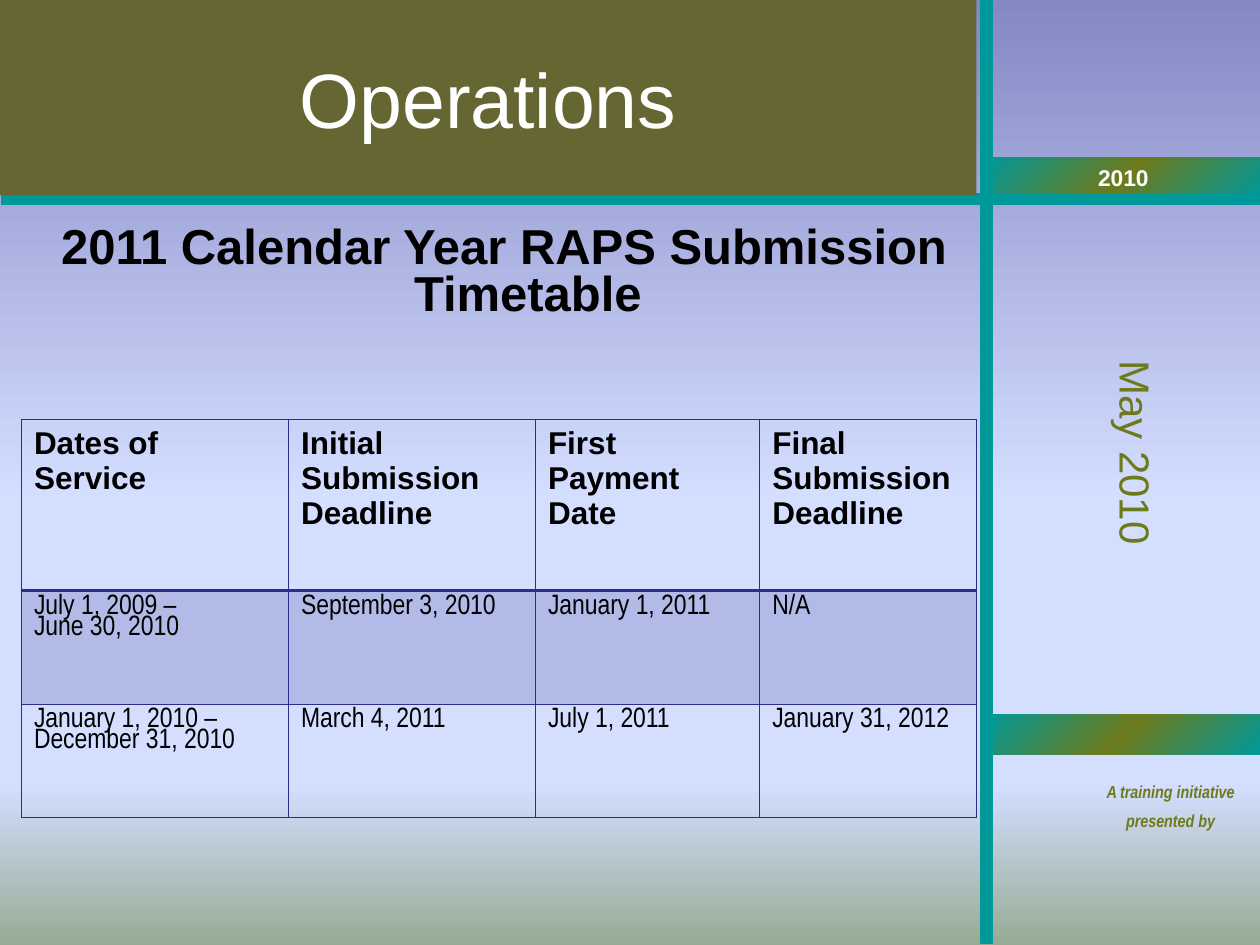
import pptx
import pptx.util
from pptx.dml.color import RGBColor
from pptx.enum.shapes import MSO_CONNECTOR, MSO_SHAPE
from pptx.enum.text import MSO_ANCHOR, PP_ALIGN
from pptx.oxml.ns import qn
from lxml import etree

Inches, Pt = pptx.util.Inches, pptx.util.Pt

TEAL = RGBColor(0x00, 0x99, 0x99)
OLIVE = RGBColor(0x6D, 0x7A, 0x1C)
BROWN = RGBColor(0x66, 0x66, 0x33)
WHITE = RGBColor(0xFF, 0xFF, 0xFF)
BLACK = RGBColor(0x00, 0x00, 0x00)
NAVY = RGBColor(0x2D, 0x2D, 0x8A)
SKY = [(0, RGBColor(0x84, 0x88, 0xC4)), (53, RGBColor(0xD4, 0xDE, 0xFF)),
       (83, RGBColor(0xD4, 0xDE, 0xFF)), (100, RGBColor(0x96, 0xAB, 0x94))]
BAND = [(0, TEAL), (50, OLIVE), (100, TEAL)]

# Content
TITLE = "Operations"
SUBTITLE = "2011 Calendar Year RAPS Submission Timetable"
YEAR = "2010"
MONTH = "May 2010"
CREDIT = "A training initiative presented by"
TIMETABLE = [
    ["Dates of Service", "Initial Submission Deadline",
     "First Payment Date", "Final Submission Deadline"],
    ["July 1, 2009 –\nJune 30, 2010", "September 3, 2010", "January 1, 2011", "N/A"],
    ["January 1, 2010 – December 31, 2010", "March 4, 2011",
     "July 1, 2011", "January 31, 2012"],
]
COLUMNS = [2.12, 1.96, 1.78, 1.72]
ROWS = [1.36, 0.9, 0.9]
RULES = [(7.83, 0, 7.83, 7.25, 6), (10, 1.58, 0.01, 1.58, 7.25),
         (7.83, 0, 7.83, 7.49, 7.25)]

# Text formats
TITLE_FONT = dict(name="Arial", size=Pt(44), bold=False)
SUBTITLE_FONT = dict(name="Arial", size=Pt(28), bold=True)
YEAR_FONT = dict(name="Arial", size=Pt(13), bold=True)
MONTH_FONT = dict(name="Arial", size=Pt(24), bold=False)
CREDIT_FONT = dict(name="Arial Narrow", size=Pt(10), bold=True, italic=True)
HEAD_FONT = dict(name="Arial", size=Pt(18), bold=True)
DATE_FONT = dict(name="Arial Narrow", size=Pt(16), bold=False)


def inches(*values):
    return [Inches(value) for value in values]


def write(frame, text, font, color, align=PP_ALIGN.CENTER, spacing=None):
    frame.word_wrap = True
    frame.text = text
    for para in frame.paragraphs:
        para.alignment = align
        para.line_spacing = spacing
        for key, value in font.items():
            setattr(para.font, key, value)
        para.font.color.rgb = color


def add_color(parent, color, alpha=None):
    node = etree.SubElement(parent, qn("a:srgbClr"), val=str(color))
    if alpha is not None:
        etree.SubElement(node, qn("a:alpha"), val=str(alpha * 1000))


def set_gradient(fill, root, stops, angle):
    fill.gradient()
    gradient = root.find(".//" + qn("a:gradFill"))
    for child in list(gradient):
        gradient.remove(child)
    stop_list = etree.SubElement(gradient, qn("a:gsLst"))
    for position, color in stops:
        stop = etree.SubElement(stop_list, qn("a:gs"), pos=str(position * 1000))
        add_color(stop, color)
    etree.SubElement(gradient, qn("a:lin"), ang=str(angle * 60000), scaled="0")


def set_borders(cell, widths):
    properties = cell._tc.get_or_add_tcPr()
    for index, (side, width) in enumerate(zip("LRTB", widths)):
        border = etree.Element(qn("a:ln" + side), w=str(Pt(width)))
        add_color(etree.SubElement(border, qn("a:solidFill")), NAVY)
        properties.insert(index, border)


deck = pptx.Presentation()
deck.slide_width, deck.slide_height = inches(10, 7.5)
page = deck.slides.add_slide(deck.slide_layouts[5])
set_gradient(page.background.fill, page.element, SKY, 90)
shapes = page.shapes

# Sidebar bands
for top, label in [(1.25, YEAR), (5.67, "")]:
    band = shapes.add_shape(MSO_SHAPE.RECTANGLE, *inches(7.83, top, 2.17, 0.32))
    band.shadow.inherit = False
    band.line.fill.background()
    set_gradient(band.fill, band._element, BAND, 45)
    if label:
        write(band.text_frame, label, YEAR_FONT, WHITE)

# Teal rules
for x1, y1, x2, y2, width in RULES:
    rule = shapes.add_connector(MSO_CONNECTOR.STRAIGHT, *inches(x1, y1, x2, y2))
    rule.line.color.rgb = TEAL
    rule.line.width = Pt(width)
    etree.SubElement(rule._element.spPr, qn("a:effectLst"))

# Sidebar texts
credit = shapes.add_textbox(*inches(8.58, 6.08, 1.42, 0.57))
write(credit.text_frame, CREDIT, CREDIT_FONT, OLIVE, spacing=1.4)
month = shapes.add_textbox(*inches(7.85, 3.4, 2.34, 0.38))
month.rotation = 90
write(month.text_frame, MONTH, MONTH_FONT, OLIVE)
month.text_frame.vertical_anchor = MSO_ANCHOR.MIDDLE

# Title, in front of the rules
title = shapes.title
title.left, title.top, title.width, title.height = inches(0, 0, 7.75, 1.55)
title.fill.solid()
title.fill.fore_color.rgb = BROWN
write(title.text_frame, TITLE, TITLE_FONT, WHITE)
title.text_frame.vertical_anchor = MSO_ANCHOR.MIDDLE
shapes._spTree.append(title._element)

# Subtitle with a hanging indent
subtitle = shapes.add_textbox(*inches(0.25, 1.75, 7.5, 0.83))
write(subtitle.text_frame, SUBTITLE, SUBTITLE_FONT, BLACK, spacing=0.8)
indent = subtitle.text_frame.paragraphs[0]._p.get_or_add_pPr()
indent.set("marL", str(Inches(0.38)))
indent.set("indent", str(Inches(-0.38)))

# Timetable
table = shapes.add_table(len(ROWS), len(COLUMNS),
                         *inches(0.17, 3.33, sum(COLUMNS), sum(ROWS))).table
table.first_row = table.horz_banding = False
for column, width in zip(table.columns, COLUMNS):
    column.width = Inches(width)
for r, (texts, height) in enumerate(zip(TIMETABLE, ROWS)):
    table.rows[r].height = Inches(height)
    for c, text in enumerate(texts):
        cell = table.cell(r, c)
        font, spacing = (HEAD_FONT, None) if r == 0 else (DATE_FONT, 0.8)
        write(cell.text_frame, text, font, BLACK, PP_ALIGN.LEFT, spacing)
        if r == 1:
            cell.fill.solid()
            cell.fill.fore_color.rgb = NAVY
            shade = cell._tc.tcPr.find(".//" + qn("a:srgbClr"))
            etree.SubElement(shade, qn("a:alpha"), val="20000")
        else:
            cell.fill.background()
        set_borders(cell, [1, 1, 2 if r == 1 else 1, 2 if r == 0 else 1])

deck.save("out.pptx")
